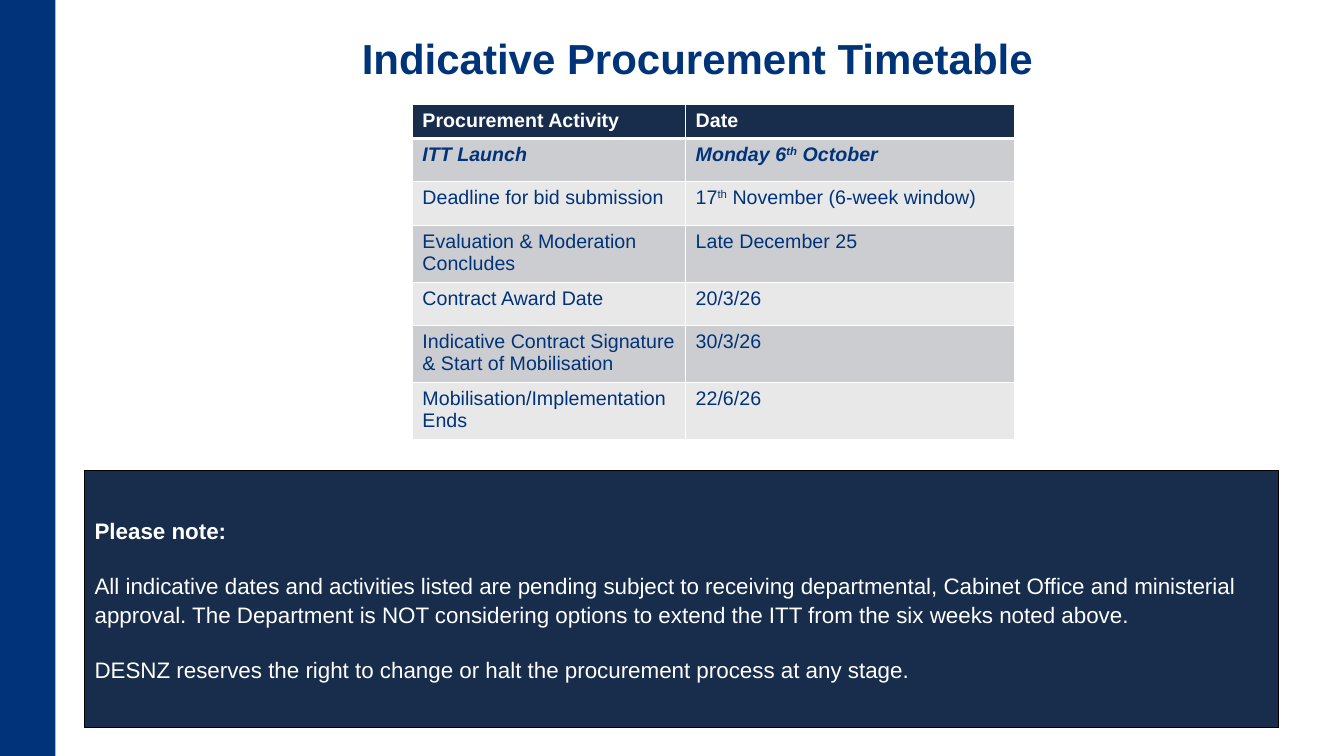
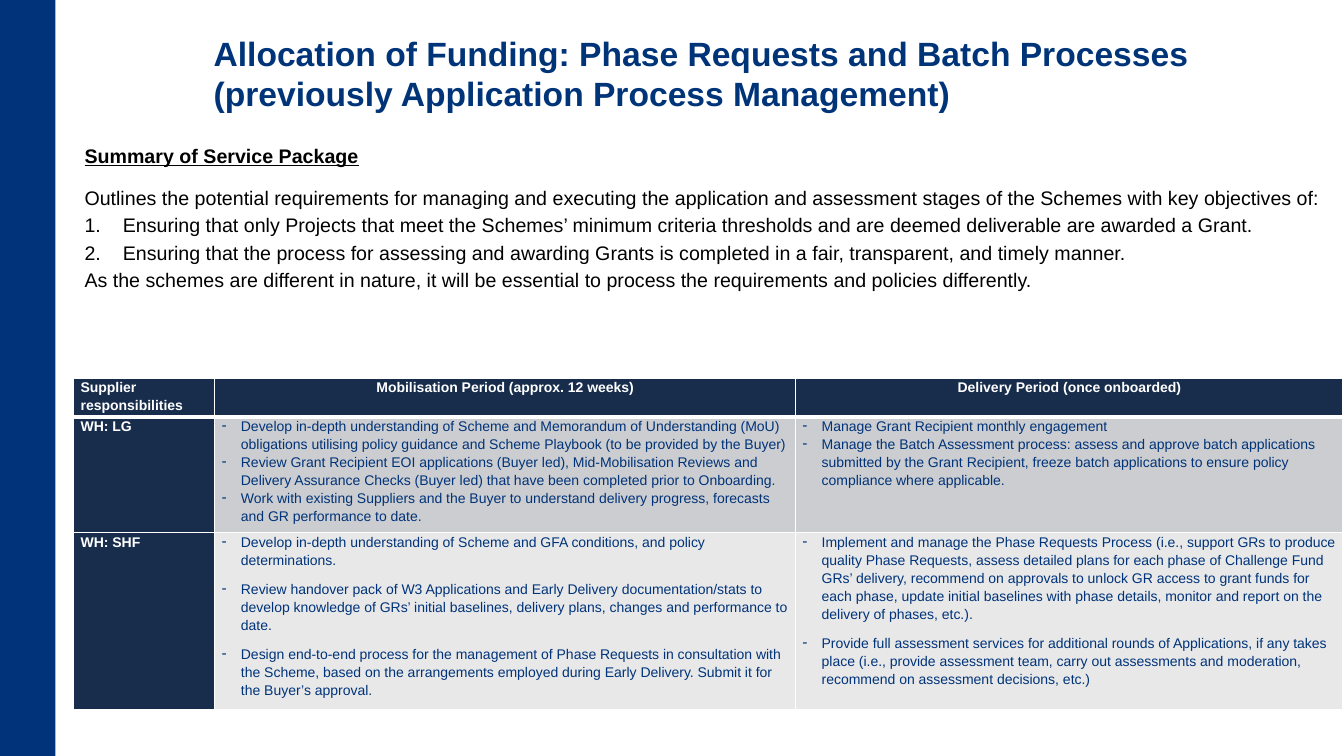
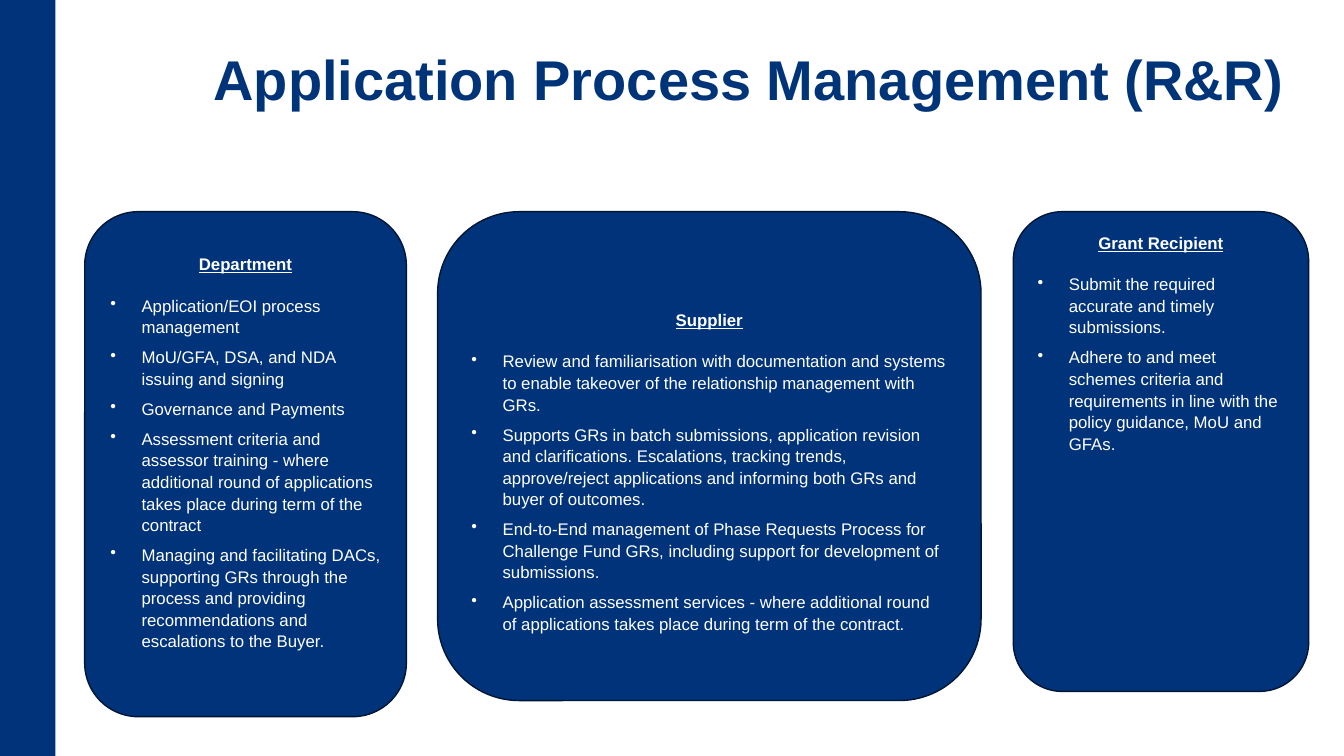
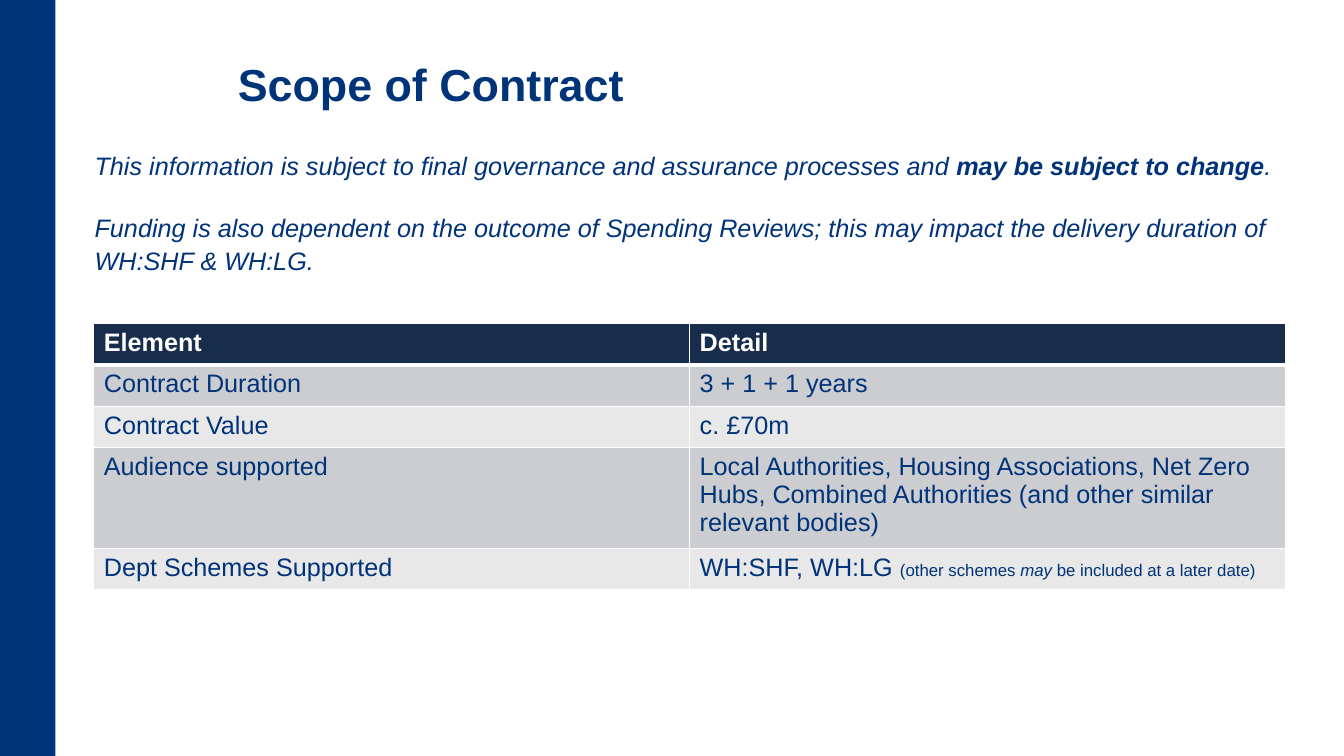
from pptx import Presentation, util as u
from pptx.dml.color import RGBColor
from pptx.enum import shapes, text
from pptx.oxml import ns
from lxml import etree

HUE = {"band": "003379", "title": "003479", "navy": "182D4C", "edge": "001635",
       "odd": "CCCDD0", "even": "E8E8E9", "white": "FFFFFF", "black": "000000"}
FONT = "Arial"
LOOSE = 1.07
LEFT, MID, JUST = text.PP_ALIGN.LEFT, text.PP_ALIGN.CENTER, text.PP_ALIGN.JUSTIFY
TOP, CENTRE, BASE = text.MSO_ANCHOR.TOP, text.MSO_ANCHOR.MIDDLE, text.MSO_ANCHOR.BOTTOM

# A paragraph is a string or a list of (words, marks) runs.
# Marks: b bold, i italic, u underline, ^ superscript, s small.

DATES = {
    "at": (4.09, 1.04), "cols": (2.71, 3.26), "size": 14,
    "rows": (0.33, 0.43, 0.43, 0.53, 0.43, 0.53, 0.53),
    "cells": [
        ("Procurement Activity", "Date"),
        ([("ITT Launch", "bi")],
         [("Monday 6", "bi"), ("th", "bi^"), (" October", "bi")]),
        ("Deadline for bid submission",
         [("17", ""), ("th", "^"), (" November (6-week window)", "")]),
        ("Evaluation & Moderation Concludes", "Late December 25"),
        ("Contract Award Date", "20/3/26"),
        ("Indicative Contract Signature & Start of Mobilisation", "30/3/26"),
        ("Mobilisation/Implementation Ends", "22/6/26"),
    ],
}
NOTE = [
    [("Please note:", "b")],
    "All indicative dates and activities listed are pending subject to receiving "
    "departmental, Cabinet Office and ministerial approval. The Department is NOT "
    "considering options to extend the ITT from the six weeks noted above.",
    "DESNZ reserves the right to change or halt the procurement process at any stage.",
]

AIMS = [
    ("Outlines the potential requirements for managing and executing the application "
     "and assessment stages of the Schemes with key objectives of:", None),
    ("Ensuring that only Projects that meet the Schemes’ minimum criteria thresholds "
     "and are deemed deliverable are awarded a Grant.", "1."),
    ("Ensuring that the process for assessing and awarding Grants is completed in a "
     "fair, transparent, and timely manner.", "1."),
    ("As the schemes are different in nature, it will be essential to process the "
     "requirements and policies differently.", None),
]
HEADS = ("Supplier responsibilities", "Mobilisation Period (approx. 12 weeks)",
         "Delivery Period (once onboarded)")
DUTIES = [
    ("WH: LG", 0, [
        "Develop in-depth understanding of Scheme and Memorandum of Understanding (MoU) "
        "obligations utilising policy guidance and Scheme Playbook (to be provided by "
        "the Buyer)",
        "Review Grant Recipient EOI applications (Buyer led), Mid-Mobilisation Reviews "
        "and Delivery Assurance Checks (Buyer led) that have been completed prior to "
        "Onboarding.",
        "Work with existing Suppliers and the Buyer to understand delivery progress, "
        "forecasts and GR performance to date.",
    ], [
        "Manage Grant Recipient monthly engagement",
        "Manage the Batch Assessment process: assess and approve batch applications "
        "submitted by the Grant Recipient, freeze batch applications to ensure policy "
        "compliance where applicable.",
    ]),
    ("WH: SHF", 8, [
        "Develop in-depth understanding of Scheme and GFA conditions, and policy "
        "determinations.",
        "Review handover pack of W3 Applications and Early Delivery documentation/stats "
        "to develop knowledge of GRs’ initial baselines, delivery plans, changes and "
        "performance to date.",
        "Design end-to-end process for the management of Phase Requests in consultation "
        "with the Scheme, based on the arrangements employed during Early Delivery. "
        "Submit it for the Buyer’s approval.",
    ], [
        "Implement and manage the Phase Requests Process (i.e., support GRs to produce "
        "quality Phase Requests, assess detailed plans for each phase of Challenge Fund "
        "GRs’ delivery, recommend on approvals to unlock GR access to grant funds for "
        "each phase, update initial baselines with phase details, monitor and report on "
        "the delivery of phases, etc.).",
        "Provide full assessment services for additional rounds of Applications, if any "
        "takes place (i.e., provide assessment team, carry out assessments and "
        "moderation, recommend on assessment decisions, etc.)",
    ]),
]

# Name, left, width, height, inset above the text, points
ROLES = [
    ("Department", 0.84, 3.19, 5.01, 0.25, [
        "Application/EOI process management",
        "MoU/GFA, DSA, and NDA issuing and signing",
        "Governance and Payments",
        "Assessment criteria and assessor training - where additional round of "
        "applications takes place during term of the contract",
        "Managing and facilitating DACs, supporting GRs through the process and "
        "providing recommendations and escalations to the Buyer.",
    ]),
    ("Supplier", 4.34, 5.39, 4.85, 0.72, [
        "Review and familiarisation with documentation and systems to enable takeover "
        "of the relationship management with GRs.",
        "Supports GRs in batch submissions, application revision and clarifications. "
        "Escalations, tracking trends, approve/reject applications and informing both "
        "GRs and buyer of outcomes.",
        "End-to-End management of Phase Requests Process for Challenge Fund GRs, "
        "including support for development of submissions.",
        "Application assessment services - where additional round of applications takes "
        "place during term of the contract.",
    ]),
    ("Grant Recipient", 10.05, 2.93, 4.76, 0.05, [
        "Submit the required accurate and timely submissions.",
        "Adhere to and meet schemes criteria and requirements in line with the policy "
        "guidance, MoU and GFAs.",
    ]),
]

CAVEATS = [
    [("This information is subject to final governance and assurance processes and ", "i"),
     ("may be subject to change", "bi"), (".", "i")],
    [("Funding is also dependent on the outcome of Spending Reviews; this may impact the "
      "delivery duration of WH:SHF & WH:LG.", "i")],
]
SCOPE = {
    "at": (0.93, 3.21), "cols": (5.91, 5.91), "size": 18,
    "rows": (0.41, 0.41, 0.41, 1.0, 0.41),
    "cells": [
        ("Element", "Detail"),
        ("Contract Duration", "3 + 1 + 1 years"),
        ("Contract Value", "c. £70m"),
        ("Audience supported",
         "Local Authorities, Housing Associations, Net Zero Hubs, Combined Authorities "
         "(and other similar relevant bodies)"),
        ("Dept Schemes Supported",
         [("WH:SHF, WH:LG ", ""), ("(other schemes ", "s"), ("may", "si"),
          (" be included at a later date)", "s")]),
    ],
}


def rgb(key):
    return RGBColor.from_string(HUE[key])


def tag(parent, name, **attrs):
    return etree.SubElement(parent, ns.qn("a:" + name), attrs)


def write(frame, words, size, hue, align=LEFT, line=None, before=0, after=0,
          mark=None, hang=0):
    """Add one paragraph, filling the empty first one if it is still free."""
    para = frame.paragraphs[0]
    if para.runs:
        para = frame.add_paragraph()
    if mark:
        props = para._p.get_or_add_pPr()
        props.set("marL", str(u.Inches(hang)))
        props.set("indent", str(-u.Inches(hang)))
        if mark == "1.":
            tag(props, "buAutoNum", type="arabicPeriod")
        else:
            tag(props, "buChar", char=mark)
    para.alignment = align
    para.space_before, para.space_after = u.Pt(before), u.Pt(after)
    if line:
        para.line_spacing = line
    for part, marks in [(words, "")] if isinstance(words, str) else words:
        run = para.add_run()
        run.text = part
        font = run.font
        font.name, font.size = FONT, u.Pt(12 if "s" in marks else size)
        font.bold, font.italic, font.underline = (m in marks for m in "biu")
        font.color.rgb = rgb(hue)
        if "^" in marks:
            run._r.get_or_add_rPr().set("baseline", "30000")


def label(slide, box, anchor=TOP):
    frame = slide.shapes.add_textbox(*map(u.Inches, box)).text_frame
    frame.word_wrap, frame.vertical_anchor = True, anchor
    return frame


def panel(slide, kind, box, fill, edge=None, anchor=TOP):
    shape = slide.shapes.add_shape(kind, *map(u.Inches, box))
    shape.shadow.inherit = False
    shape.fill.solid()
    shape.fill.fore_color.rgb = rgb(fill)
    if edge:
        shape.line.color.rgb, shape.line.width = rgb(edge), u.Pt(1)
    else:
        shape.line.fill.background()
    frame = shape.text_frame
    frame.word_wrap, frame.vertical_anchor = True, anchor
    return frame


def start(deck, title, size, box=(2.02, 0.3, 11.18, 0.88), align=LEFT):
    """Add a slide with the side band and its title."""
    slide = deck.slides.add_slide(deck.slide_layouts[6])
    panel(slide, shapes.MSO_SHAPE.RECTANGLE, (0, 0, 0.55, 7.5), "band")
    write(label(slide, box, BASE), [(title, "b")], size, "title", align, line=0.97)
    return slide


def paint(cell, fill, head):
    """Fill a cell and rule it in white, thicker below the head row."""
    props = cell._tc.get_or_add_tcPr()
    for side in ("lnL", "lnR", "lnT", "lnB"):
        width = u.Pt(3 if head and side == "lnB" else 1)
        rule = tag(props, side, w=str(width))
        tag(tag(rule, "solidFill"), "srgbClr", val=HUE["white"])
    cell.fill.solid()
    cell.fill.fore_color.rgb = rgb(fill)


def grid(slide, at, cols, rows):
    """Add a table with a navy head row and grey bands."""
    size = (sum(cols), sum(rows))
    table = slide.shapes.add_table(len(rows), len(cols),
                                   *map(u.Inches, at + size)).table
    for col, width in zip(table.columns, cols):
        col.width = u.Inches(width)
    for row, height in zip(table.rows, rows):
        row.height = u.Inches(height)
    for r in range(len(rows)):
        fill = "navy" if r == 0 else ("even", "odd")[r % 2]
        for c in range(len(cols)):
            paint(table.cell(r, c), fill, r == 0)
    return table


def fill_grid(slide, data):
    table = grid(slide, data["at"], data["cols"], data["rows"])
    for r, row in enumerate(data["cells"]):
        for c, words in enumerate(row):
            frame = table.cell(r, c).text_frame
            if r == 0:
                write(frame, [(words, "b")], data["size"], "white")
            else:
                write(frame, words, data["size"], "band")


def show_dates(deck):
    slide = start(deck, "Indicative Procurement Timetable", 30,
                  (3.49, 0.16, 7.15, 0.73))
    fill_grid(slide, DATES)
    frame = panel(slide, shapes.MSO_SHAPE.RECTANGLE, (0.84, 4.67, 11.84, 2.55),
                  "navy", "black", CENTRE)
    for n, words in enumerate(NOTE):
        write(frame, words, 16, "white", line=LOOSE, before=19 if n else 0)


def show_duties(deck):
    slide = start(deck, "Allocation of Funding: Phase Requests and Batch Processes "
                  "(previously Application Process Management)", 24)
    frame = label(slide, (0.74, 1.38, 12.46, 1.61))
    write(frame, [("Summary of Service Package", "bu")], 14, "black")
    for n, (words, mark) in enumerate(AIMS):
        write(frame, words, 14, "black", JUST, u.Pt(13.5), before=0 if n else 16.5,
              after=6, mark=mark, hang=0.38)

    table = grid(slide, (0.73, 3.75), (1.4, 5.76, 5.43), (0.38, 1.15, 1.76))
    for cell in table.iter_cells():
        cell.margin_left = cell.margin_right = u.Inches(0.07)
        cell.margin_top = cell.margin_bottom = 0
    for c, head in enumerate(HEADS):
        write(table.cell(0, c).text_frame, [(head, "b")], 10, "white",
              MID if c else LEFT, 1.15)
    for r, (name, gap, *lists) in enumerate(DUTIES, 1):
        side = table.cell(r, 0)
        side.fill.fore_color.rgb = rgb("navy")
        write(side.text_frame, [(name, "b")], 10, "white", line=1.15, after=8)
        for c, points in enumerate(lists, 1):
            for words in points:
                write(table.cell(r, c).text_frame, words, 10, "band", line=1.15,
                      after=gap, mark="-", hang=0.19)


def show_roles(deck):
    slide = start(deck, "Application Process Management (R&R)", 40)
    for name, left, width, height, inset, points in ROLES:
        frame = panel(slide, shapes.MSO_SHAPE.ROUNDED_RECTANGLE,
                      (left, 2.1, width, height), "band", "edge")
        frame.margin_top = u.Inches(inset)
        write(frame, [(name, "bu")], 12, "white", MID, LOOSE, after=14.4)
        for words in points:
            write(frame, words, 12, "white", line=LOOSE, after=6, mark="•", hang=0.31)


def show_scope(deck):
    slide = start(deck, "Scope of Contract", 32, (2.26, 0.52, 4.18, 0.64))
    frame = label(slide, (0.84, 1.42, 11.92, 1.62))
    for n, words in enumerate(CAVEATS):
        write(frame, words, 18, "band", line=LOOSE, before=21.5 if n else 0)
    fill_grid(slide, SCOPE)


def main():
    deck = Presentation()
    deck.slide_width, deck.slide_height = u.Inches(13.33), u.Inches(7.5)
    for show in (show_dates, show_duties, show_roles, show_scope):
        show(deck)
    deck.save("out.pptx")


if __name__ == "__main__":
    main()
